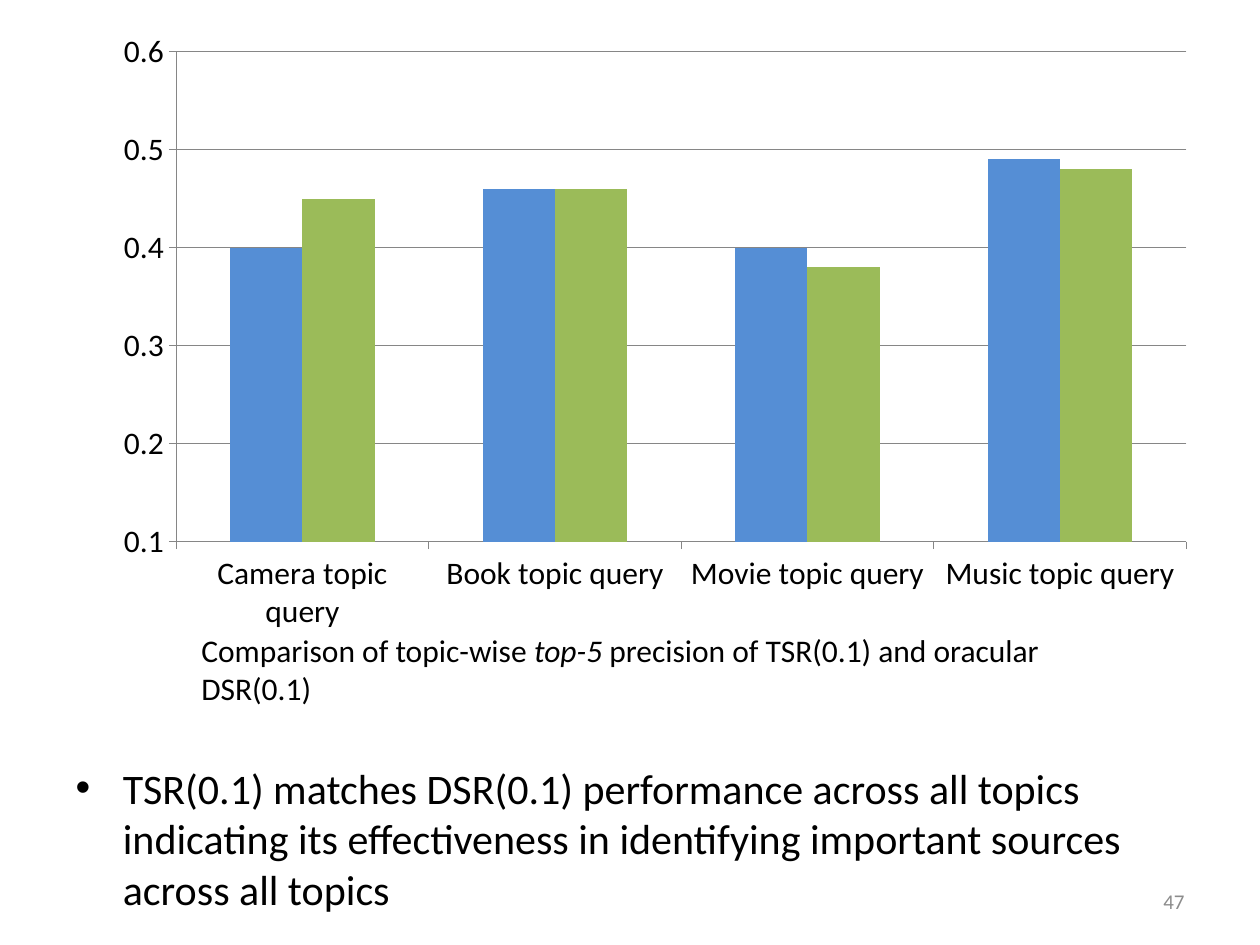
import pptx
import pptx.chart.data
import pptx.dml.color
import pptx.enum.chart
import pptx.enum.text
import pptx.oxml
import pptx.oxml.ns
import pptx.util

Cm = pptx.util.Cm
Pt = pptx.util.Pt
RGBColor = pptx.dml.color.RGBColor

BLACK = RGBColor(0x00, 0x00, 0x00)
GREY = RGBColor(0x8C, 0x8C, 0x8C)
AXIS_GREY = RGBColor(0x86, 0x86, 0x86)
BLUE = RGBColor(0x55, 0x8E, 0xD5)
GREEN = RGBColor(0x9B, 0xBB, 0x59)


class SlideWriter:
    """Holds the text style and the slide being filled."""

    font_name = "Calibri"

    def __init__(self, slide):
        self.slide = slide

    def style_font(self, font, size, color=BLACK):
        font.name = self.font_name
        font.size = Pt(size)
        font.color.rgb = color

    def add_runs(self, paragraph, runs, size, color=BLACK):
        """Append (text, italic) pairs to the paragraph."""
        for text, italic in runs:
            run = paragraph.add_run()
            run.text = text
            self.style_font(run.font, size, color)
            if italic:
                run.font.italic = True

    def text(self, box, runs, size, color=BLACK,
             align=pptx.enum.text.PP_ALIGN.LEFT,
             anchor=pptx.enum.text.MSO_ANCHOR.TOP):
        frame = self.slide.shapes.add_textbox(*box).text_frame
        frame.word_wrap = True
        frame.vertical_anchor = anchor
        frame.paragraphs[0].alignment = align
        self.add_runs(frame.paragraphs[0], runs, size, color)

    def body(self, box, text, size):
        body = self.slide.placeholders[1]
        body.left, body.top, body.width, body.height = box
        body.text_frame.auto_size = pptx.enum.text.MSO_AUTO_SIZE.NONE
        self.add_runs(body.text_frame.paragraphs[0], [(text, False)], size)

    def column_chart(self, box, categories, series, value_range, step, plot_area):
        """Add clustered columns; series holds (name, values, colour)."""
        data = pptx.chart.data.CategoryChartData()
        data.categories = categories
        for name, values, _ in series:
            data.add_series(name, values)
        chart = self.slide.shapes.add_chart(
            pptx.enum.chart.XL_CHART_TYPE.COLUMN_CLUSTERED, *box, data).chart
        chart.has_title = False
        chart.has_legend = False
        self.style_font(chart.font, 10)

        plot = chart.plots[0]
        plot.vary_by_categories = False
        plot.gap_width = 150
        plot.overlap = 0
        for columns, (_, _, color) in zip(plot.series, series):
            columns.format.fill.solid()
            columns.format.fill.fore_color.rgb = color

        values_axis = chart.value_axis
        values_axis.minimum_scale, values_axis.maximum_scale = value_range
        values_axis.major_unit = step
        values_axis.has_major_gridlines = True
        values_axis.tick_labels.number_format = "0.0"
        values_axis.tick_labels.number_format_is_linked = False
        for axis in (chart.category_axis, values_axis):
            axis.major_tick_mark = pptx.enum.chart.XL_TICK_MARK.OUTSIDE
            self.style_font(axis.tick_labels.font, 18)
        for line in (chart.category_axis.format.line, values_axis.format.line,
                     values_axis.major_gridlines.format.line):
            line.color.rgb = AXIS_GREY
            line.width = Pt(0.75)
        self.place_plot(chart, plot_area)

    def place_plot(self, chart, plot_area):
        """Fix the inner plot area, given as fractions of the chart."""
        sizes = "".join(f'<c:{key} val="{value}"/>'
                        for key, value in zip("xywh", plot_area))
        layout = pptx.oxml.parse_xml(
            f'<c:layout {pptx.oxml.ns.nsdecls("c")}><c:manualLayout>'
            '<c:layoutTarget val="inner"/>'
            '<c:xMode val="edge"/><c:yMode val="edge"/>'
            f'{sizes}</c:manualLayout></c:layout>')
        area = chart.plots[0]._element.getparent()
        for old in area.findall(pptx.oxml.ns.qn("c:layout")):
            area.remove(old)
        area.insert(0, layout)


def main():
    deck = pptx.Presentation()
    deck.slide_width, deck.slide_height = Cm(25.4), Cm(19.05)
    slide = deck.slides.add_slide(deck.slide_layouts[1])
    title = slide.shapes.title._element
    title.getparent().remove(title)
    writer = SlideWriter(slide)

    writer.text((Cm(18.2), Cm(17.66), Cm(5.93), Cm(1.01)), [("47", False)],
                12, GREY, pptx.enum.text.PP_ALIGN.RIGHT,
                pptx.enum.text.MSO_ANCHOR.MIDDLE)
    writer.text((Cm(3.81), Cm(12.6), Cm(18.62), Cm(1.8)),
                [("Comparison of topic-wise ", False), ("top-5 ", True),
                 ("precision of TSR(0.1) and oracular DSR(0.1)", False)], 18)
    writer.body((Cm(1.27), Cm(15.24), Cm(22.86), Cm(3.38)),
                "TSR(0.1) matches DSR(0.1) performance across all topics "
                "indicating its effectiveness in identifying important "
                "sources across all topics", 24)
    writer.column_chart(
        (Cm(1.47), Cm(0.43), Cm(23.14), Cm(12.27)),
        [f"{topic} topic query" for topic in ("Camera", "Book", "Movie", "Music")],
        [("DSR(0.1)", (0.4, 0.46, 0.4, 0.49), BLUE),
         ("TSR(0.1)", (0.45, 0.46, 0.38, 0.48), GREEN)],
        (0.1, 0.6), 0.1, (0.09, 0.05, 0.88, 0.81))
    deck.save("out.pptx")


if __name__ == "__main__":
    main()
